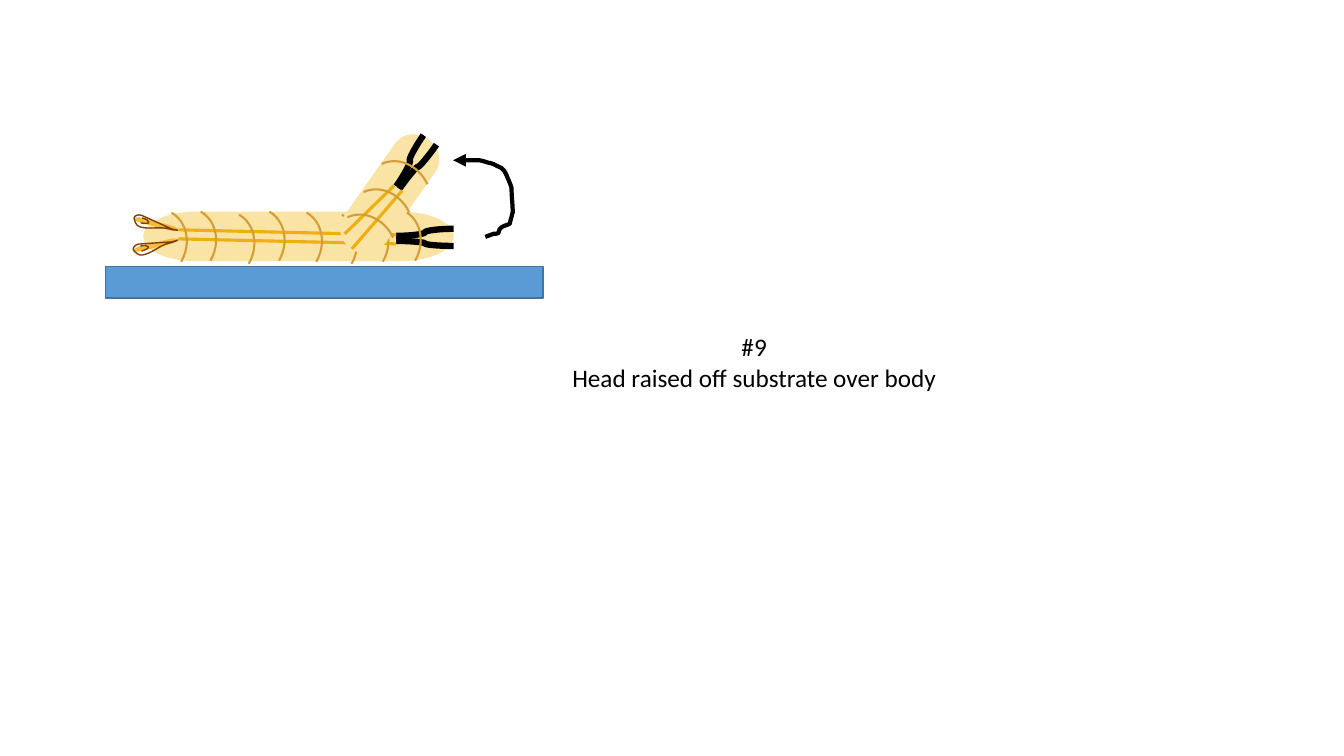
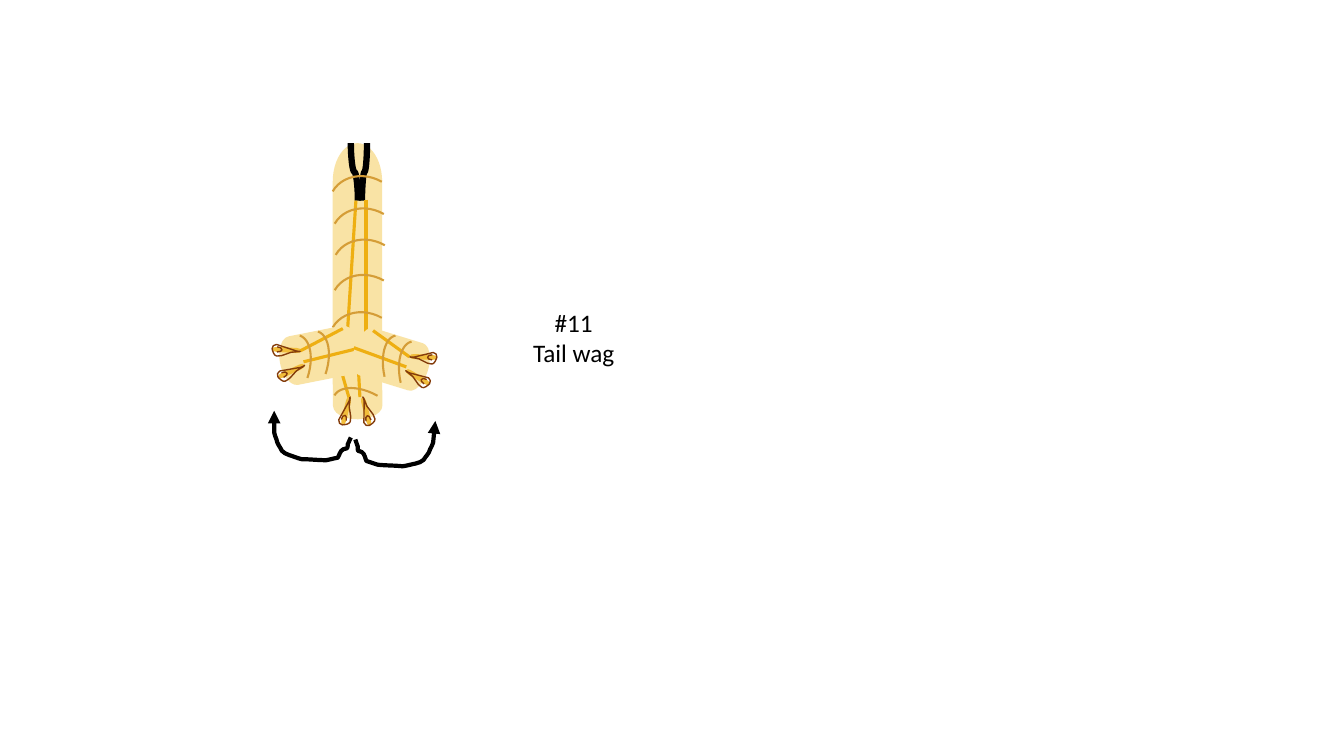
from pptx import Presentation
from pptx.dml.color import RGBColor
from pptx.enum.shapes import MSO_CONNECTOR as CONN, MSO_SHAPE as SHP
from pptx.enum.text import MSO_AUTO_SIZE as AUTO, PP_ALIGN as AL
from pptx.oxml.ns import qn
from pptx.util import Inches, Pt
from lxml.etree import SubElement

SKIN, CORD, RING = "F9E3A5", "EEAF12", "D59D37"
HOOK_FILL, HOOK_LINE = "F1BD3B", "843C0B"
BLUE, BLUE_EDGE, BLACK = "5B9BD5", "43739E", "000000"
FONT = {"name": "Calibri", "size": Pt(18)}
GRID = 1000

HOOK_BODY = [
    (-0.34, -0.14), [(0.32, -0.14)],
    [(0.41, -0.14), (0.49, -0.07), (0.49, 0.1)],
    [(0.48, 0.18), (0.4, 0.28), (0.32, 0.28)],
    [(-0.35, 0.28)],
    [(-0.44, 0.28), (-0.51, 0.22), (-0.51, 0.04)],
    [(-0.51, -0.03), (-0.44, -0.14), (-0.34, -0.14)],
]
HOOK_LID = [
    (0.32, 0.28),
    [(0.22, 0.28), (0.16, 0.22), (0.15, 0.05)],
    [(0.15, -0.03), (0.23, -0.14), (0.32, -0.14)],
]
HOOK_EDGE = [
    (-0.33, -0.04),
    [(-0.1, -0.01), (0.09, -0.52), (0.32, -0.48)],
    [(0.41, -0.48), (0.47, -0.08), (0.49, 0.1)],
    [(0.5, 0.28), (0.44, 0.48), (0.35, 0.48)],
    [(-0.36, 0.02)],
    [(-0.47, 0), (-0.51, 0.04), (-0.51, 0.04)],
    [(-0.51, 0.03), (-0.44, -0.03), (-0.33, -0.04)],
]
HOOK = [
    (HOOK_BODY, True, {"stroke": "0"}),
    (HOOK_LID, False, {"fill": "none"}),
    (HOOK_EDGE, True, {"fill": "none"}),
]
SWING = [
    (0.04, 0.5),
    [(0.09, 0.49), (0.13, 0.47), (0.18, 0.46)],
    [(0.21, 0.46), (0.25, 0.46), (0.26, 0.45)],
    [(0.28, 0.43), (0.26, 0.41), (0.28, 0.4)],
    [(0.31, 0.36), (0.4, 0.35), (0.45, 0.33)],
    [(0.46, 0.29), (0.47, 0.27), (0.48, 0.24)],
    [(0.48, 0.21), (0.5, 0.2), (0.5, 0.18)],
    [(0.5, 0.07), (0.48, -0.03), (0.48, -0.14)],
    [(0.47, -0.18), (0.4, -0.29), (0.4, -0.3)],
    [(0.38, -0.32), (0.38, -0.34), (0.36, -0.36)],
    [(0.35, -0.37), (0.33, -0.38), (0.31, -0.4)],
    [(0.21, -0.43), (0.18, -0.46), (0.08, -0.47)],
    [(0.03, -0.49), (-0.02, -0.49), (-0.06, -0.5)],
    [(-0.21, -0.5), (-0.35, -0.5), (-0.5, -0.5)],
]


def rgb(value):
    """Turn a hex string into a colour."""
    return RGBColor.from_string(value)


def paint(sp, fill=None, line=None, width=1):
    """Set fill and line of a shape, without shadow."""
    sp.shadow.inherit = False
    if fill:
        sp.fill.solid()
        sp.fill.fore_color.rgb = rgb(fill)
    else:
        sp.fill.background()
    if line:
        sp.line.color.rgb = rgb(line)
        sp.line.width = Pt(width)
    else:
        sp.line.fill.background()


def turn(sp, rot, flips=""):
    """Rotate a shape and mirror it along the axes named in flips."""
    sp.rotation = rot
    for axis in flips:
        sp._element.spPr.find(qn("a:xfrm")).set("flip" + axis, "1")


def preset(shapes, kind, x, y, w, h, rot=0, flips="", **look):
    """Add a painted preset shape."""
    sp = shapes.add_shape(kind, Inches(x), Inches(y), Inches(w), Inches(h))
    turn(sp, rot, flips)
    paint(sp, **look)


def connect(shapes, kind, x1, y1, x2, y2, color, width, rot=0):
    """Add a connector without shadow."""
    c = shapes.add_connector(kind, Inches(x1), Inches(y1), Inches(x2), Inches(y2))
    c.rotation = rot
    c.line.color.rgb = rgb(color)
    c.line.width = Pt(width)
    SubElement(c._element.spPr, qn("a:effectLst"))


def add_path(path_list, outline, close, attrs):
    """Write one outline of lines and cubic curves into a path list."""
    path = SubElement(path_list, qn("a:path"), {"w": str(GRID), "h": str(GRID), **attrs})
    tags = {1: "a:lnTo", 3: "a:cubicBezTo"}
    steps = [("a:moveTo", outline[:1])] + [(tags[len(s)], s) for s in outline[1:]]
    for tag, pts in steps:
        step = SubElement(path, qn(tag))
        for u, v in pts:
            x, y = (str(round((c + 0.5) * GRID)) for c in (u, v))
            SubElement(step, qn("a:pt"), {"x": x, "y": y})
    if close:
        SubElement(path, qn("a:close"))


def sketch(shapes, paths, cx, cy, w, h, rot=0, flips="", **look):
    """Draw outlines as one freeform about a centre."""
    left, top = cx - w / 2, cy - h / 2
    fb = shapes.build_freeform(Inches(left), Inches(top))
    fb.add_line_segments([(Inches(left + w), Inches(top + h))], close=False)
    sp = fb.convert_to_shape()
    path_list = sp._element.spPr.find(qn("a:custGeom")).find(qn("a:pathLst"))
    for old in list(path_list):
        path_list.remove(old)
    for outline, close, attrs in paths:
        add_path(path_list, outline, close, attrs)
    turn(sp, rot, flips)
    paint(sp, **look)
    return sp


def swing_arrow(shapes, cx, cy, w, h, rot=0, flips=""):
    """Draw the curved arrow showing a movement."""
    paths = [(SWING, False, {"fill": "none"})]
    sp = sketch(shapes, paths, cx, cy, w, h, rot, flips, line=BLACK, width=3)
    SubElement(sp.line._get_or_add_ln(), qn("a:tailEnd"), {"type": "triangle"})


def mandibles(shapes, lower, upper, rot):
    """Draw the two mouth hooks, facing each other."""
    w = 0.57
    x, y = lower
    connect(shapes, CONN.CURVE, x, y, x + w, y + 0.05, BLACK, 4.5, rot)
    x, y = upper
    connect(shapes, CONN.CURVE, x + w, y, x, y + 0.07, BLACK, 4.5, (rot + 180) % 360)


def segment(shapes, box, rot, cords, rings, ring_w, ring_rot,
            mouth=None, hooks=(), hook_len=0.29, flips=""):
    """Draw a part of the larva, with offsets from the corner of its box."""
    x, y, w, h = box
    preset(shapes, SHP.FLOWCHART_DIRECT_ACCESS_STORAGE, x, y, w, h, rot, flips, fill=SKIN)
    if mouth:
        lower, upper, angle = mouth
        mandibles(shapes, *[(x + dx, y + dy) for dx, dy in (lower, upper)], angle)
    for dx, dy, angle in hooks:
        sketch(shapes, HOOK, x + dx, y + dy, hook_len, 0.12, angle, flips,
               fill=HOOK_FILL, line=HOOK_LINE)
    for x1, y1, x2, y2 in cords:
        connect(shapes, CONN.STRAIGHT, x + x1, y + y1, x + x2, y + y2, CORD, 2.25)
    for dx, dy in rings:
        preset(shapes, SHP.ARC, x + dx, y + dy, ring_w, 0.75, ring_rot, flips,
               line=RING, width=1.5)


def caption(shapes, x, y, w, h, lines):
    """Write the centred number and name of a behaviour."""
    tf = shapes.add_textbox(Inches(x), Inches(y), Inches(w), Inches(h)).text_frame
    tf.word_wrap = False
    tf.auto_size = AUTO.SHAPE_TO_FIT_TEXT
    for i, text in enumerate(lines):
        p = tf.add_paragraph() if i else tf.paragraphs[0]
        p.alignment = AL.CENTER
        r = p.add_run()
        r.text = text
        for key, value in FONT.items():
            setattr(r.font, key, value)
        r.font.color.rgb = rgb(BLACK)


def head_raise(shapes):
    """Build the slide of the larva raising its head."""
    preset(shapes, SHP.RECTANGLE, 3.06, 0.63, 0.31, 4.34, 270, fill=BLUE, line=BLUE_EDGE)
    caption(shapes, 5.55, 3.24, 3.86, 0.71, ["#9", "Head raised off substrate over body"])
    swing_arrow(shapes, 4.79, 1.97, 0.59, 0.76)
    segment(
        shapes.add_group_shape().shapes, (1.42, 2.1, 3.08, 0.49), 180,
        cords=[(2.51, 0.23, 0.35, 0.18), (2.51, 0.32, 0.35, 0.27)],
        rings=[(2.09, -0.05), (1.77, -0.04), (1.46, -0.02), (1.11, -0.04),
               (0.74, -0.05), (0.44, -0.02), (0.06, -0.05), (-0.23, -0.04)],
        ring_w=0.65, ring_rot=29.8,
        mouth=((2.51, 0.29), (2.51, 0.17), 180),
        hooks=[(0.12, 0.13, 194.5), (0.12, 0.34, 166.4)], hook_len=0.45,
    )
    segment(
        shapes.add_group_shape().shapes, (3.2, 1.68, 1.33, 0.49), 125.1,
        cords=[(0.71, 0.16, 0.22, 0.64), (0.79, 0.21, 0.29, 0.79)],
        rings=[(0.42, -0.09), (0.24, 0.19), (0.08, 0.44)],
        ring_w=0.65, ring_rot=335,
        mouth=((0.66, -0.05), (0.58, -0.12), 125),
    )


def tail_wag(shapes):
    """Build the slide of the larva wagging its tail."""
    caption(shapes, 5.18, 3, 1.02, 0.71, ["#11", "Tail wag"])
    segment(
        shapes, (2.4, 2.32, 2.29, 0.49), 90,
        cords=[(1.13, -0.33, 1.02, 1.38), (1.23, -0.34, 1.23, 1.2)],
        rings=[(0.9, -0.61), (0.92, -0.29), (0.93, 0.02),
               (0.92, 0.37), (0.9, 0.74), (0.93, 1.04)],
        ring_w=0.65, ring_rot=299.8,
        mouth=((0.93, -0.64), (0.83, -0.65), 90),
    )
    segment(
        shapes, (3.14, 3.51, 0.81, 0.49), 89.3,
        cords=[(0.19, -0.02, 0.32, 0.43), (0.4, -0.13, 0.43, 0.43)],
        rings=[(0.31, -0.21), (0.28, 0.04), (0.3, 0.22)],
        ring_w=0.41, ring_rot=299.2,
        hooks=[(0.3, 0.57, 103.9), (0.5, 0.57, 75.7)],
    )
    swing_arrow(shapes, 3.1, 4.32, 0.49, 0.76, 270, "H")
    swing_arrow(shapes, 3.91, 4.38, 0.49, 0.77, 275.9, "HV")
    segment(
        shapes.add_group_shape().shapes, (2.77, 3.28, 0.81, 0.49), 168.7,
        cords=[(0.63, -0.02, 0.21, 0.2), (0.81, 0.17, 0.24, 0.31)],
        rings=[(0.06, -0.01), (-0.12, 0.03)],
        ring_w=0.41, ring_rot=18.5,
        hooks=[(0.07, 0.2, 183.2), (0.12, 0.41, 155.1)],
    )
    segment(
        shapes.add_group_shape().shapes, (3.5, 3.32, 0.76, 0.49), 197.1,
        cords=[(0.2, -0.04, 0.56, 0.22), (0.01, 0.13, 0.53, 0.32)],
        rings=[(0.31, 0), (0.47, 0.06)],
        ring_w=0.39, ring_rot=347.3,
        hooks=[(0.7, 0.23, 182.6), (0.64, 0.43, 210.7)], hook_len=0.27, flips="H",
    )


def main():
    """Build and save the presentation."""
    prs = Presentation()
    prs.slide_width, prs.slide_height = Inches(13.33), Inches(7.5)
    for build in (head_raise, tail_wag):
        build(prs.slides.add_slide(prs.slide_layouts[6]).shapes)
    prs.save("out.pptx")


if __name__ == "__main__":
    main()
